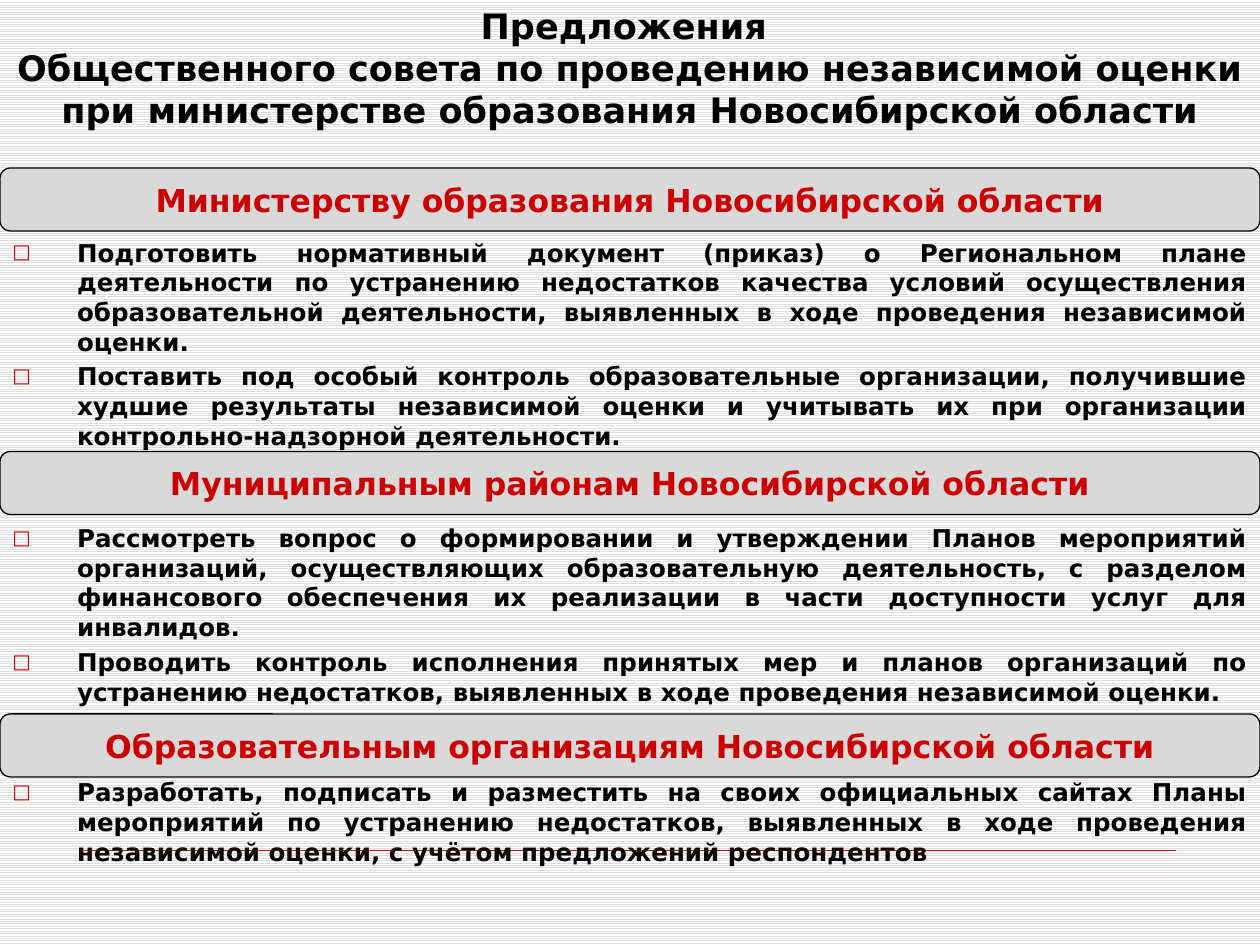
"""Build a slide of proposals in three headed sections with bulleted text."""
from lxml.etree import SubElement
from pptx import Presentation
from pptx.dml.color import RGBColor
from pptx.enum.dml import MSO_PATTERN
from pptx.enum.shapes import MSO_CONNECTOR, MSO_SHAPE
from pptx.enum.text import MSO_ANCHOR as Anchor, MSO_AUTO_SIZE, PP_ALIGN as Align
from pptx.oxml.ns import qn
from pptx.util import Pt

COLORS = {"text": "000000", "accent": "CC0000", "banner": "D9D9D9",
          "stripe": "DDDDDD", "paper": "FFFFFF"}
FONT = "DejaVu Sans"
WIDTH, HEIGHT = 720, 540
BANNER_HEIGHT = 36
TITLE = ("Предложения \vОбщественного совета по проведению независимой оценки "
         "при министерстве образования Новосибирской области")
SECTIONS = [
    (96, 132, 128, "Министерству образования Новосибирской области", [
        "Подготовить нормативный документ (приказ) о Региональном плане деятельности "
        "по устранению недостатков качества условий осуществления образовательной "
        "деятельности, выявленных в ходе проведения независимой оценки.",
        "Поставить под особый контроль образовательные организации, получившие худшие "
        "результаты независимой оценки и учитывать их при организации "
        "контрольно-надзорной деятельности."]),
    (258, 295, 112, "Муниципальным районам Новосибирской области", [
        "Рассмотреть вопрос о формировании и утверждении Планов мероприятий организаций, "
        "осуществляющих образовательную деятельность, с разделом финансового обеспечения "
        "их реализации в части доступности услуг для инвалидов.",
        "Проводить контроль исполнения принятых мер и планов организаций по устранению "
        "недостатков, выявленных в ходе проведения независимой оценки."]),
    (408, 440.5, 60, "Образовательным организациям Новосибирской области", [
        "Разработать, подписать и разместить на своих официальных сайтах Планы "
        "мероприятий по устранению недостатков, выявленных в ходе проведения "
        "независимой оценки, с учётом предложений респондентов"]),
]


def rgb(name):
    return RGBColor.from_string(COLORS[name])


def write(frame, texts, size, color="text", align=Align.CENTER, anchor=Anchor.TOP,
          spacing=None, gap=0, bullet=None):
    frame.word_wrap = True
    frame.auto_size = MSO_AUTO_SIZE.NONE
    frame.vertical_anchor = anchor
    for index, text in enumerate(texts):
        para = frame.add_paragraph() if index else frame.paragraphs[0]
        para.text = text
        para.alignment = align
        para.space_before = Pt(gap if index else 0)
        if spacing:
            para.line_spacing = Pt(spacing)
        if bullet:
            props = para._p.get_or_add_pPr()
            props.set("marL", str(Pt(37)))
            props.set("indent", str(Pt(-37)))
            tint = SubElement(props, qn("a:buClr"))
            SubElement(tint, qn("a:srgbClr"), val=COLORS["accent"])
            SubElement(props, qn("a:buSzPct"), val="80000")
            SubElement(props, qn("a:buFont"), typeface=FONT)
            SubElement(props, qn("a:buChar"), char=bullet)
        for span in para.runs:
            span.font.name = FONT
            span.font.size = Pt(size)
            span.font.bold = True
            span.font.color.rgb = rgb(color)


deck = Presentation()
deck.slide_width, deck.slide_height = Pt(WIDTH), Pt(HEIGHT)
page = deck.slides.add_slide(deck.slide_layouts[5])

backdrop = page.background.fill
backdrop.patterned()
backdrop.pattern = MSO_PATTERN.LIGHT_HORIZONTAL
backdrop.fore_color.rgb = rgb("stripe")
backdrop.back_color.rgb = rgb("paper")

rule = page.shapes.add_connector(MSO_CONNECTOR.STRAIGHT, Pt(48), Pt(486), Pt(672), Pt(486))
rule.line.color.rgb = rgb("accent")
rule.line.width = Pt(0.25)
SubElement(rule._element.spPr, qn("a:effectLst"))

title = page.shapes.title
title.left, title.top, title.width, title.height = Pt(0), Pt(0), Pt(WIDTH), Pt(78)
write(title.text_frame, [TITLE], 20, anchor=Anchor.BOTTOM, spacing=24)

for banner_top, list_top, list_height, heading, proposals in SECTIONS:
    box = page.shapes.add_textbox(Pt(0), Pt(list_top), Pt(WIDTH), Pt(list_height))
    write(box.text_frame, proposals, 14, align=Align.JUSTIFY, spacing=17, gap=2.8, bullet="□")

    banner = page.shapes.add_shape(MSO_SHAPE.ROUNDED_RECTANGLE, Pt(0), Pt(banner_top),
                                   Pt(WIDTH), Pt(BANNER_HEIGHT))
    banner.shadow.inherit = False
    banner.fill.solid()
    banner.fill.fore_color.rgb = rgb("banner")
    banner.line.color.rgb = rgb("text")
    banner.line.width = Pt(0.75)
    write(banner.text_frame, [heading], 18, color="accent", anchor=Anchor.MIDDLE, spacing=22)

deck.save("out.pptx")
